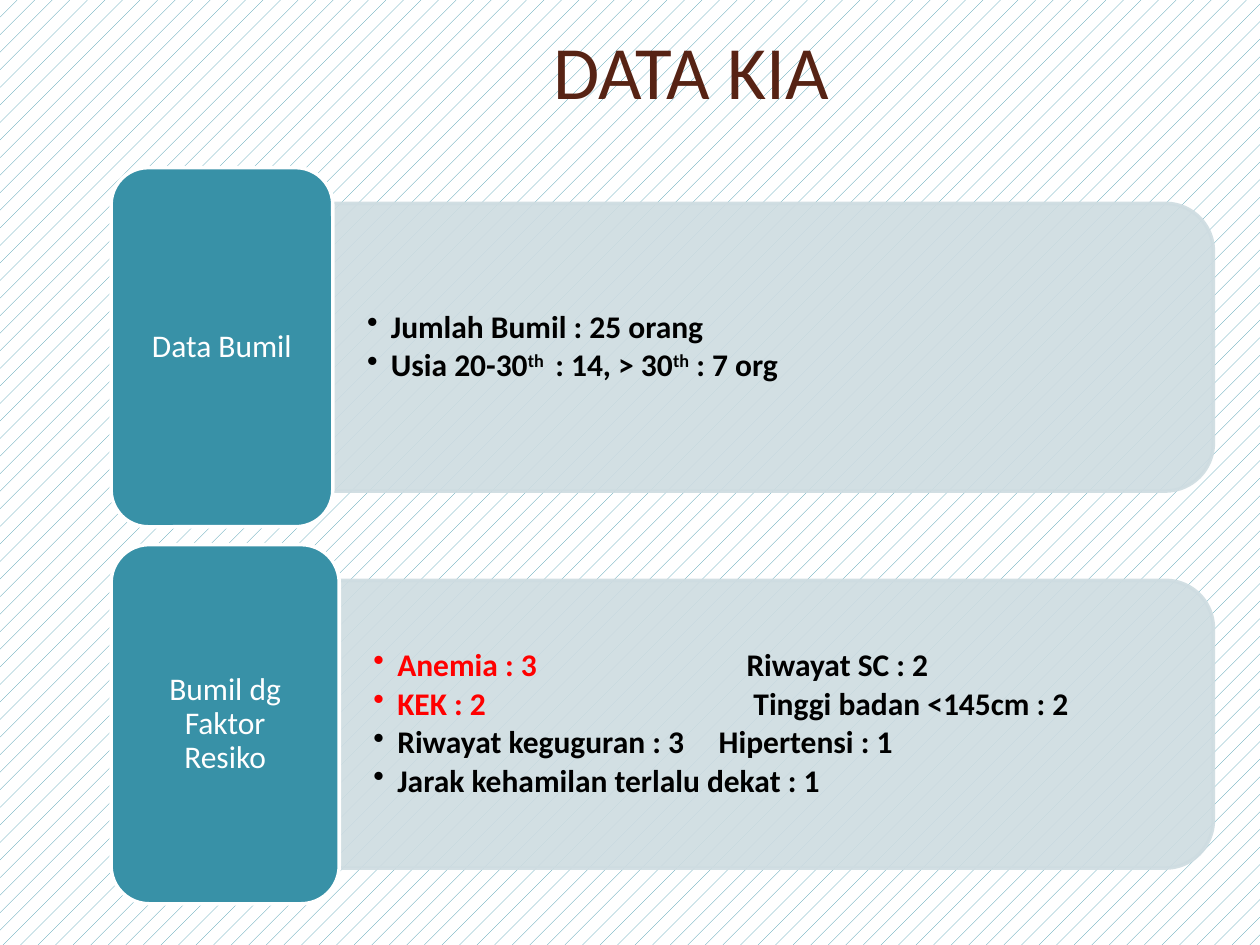
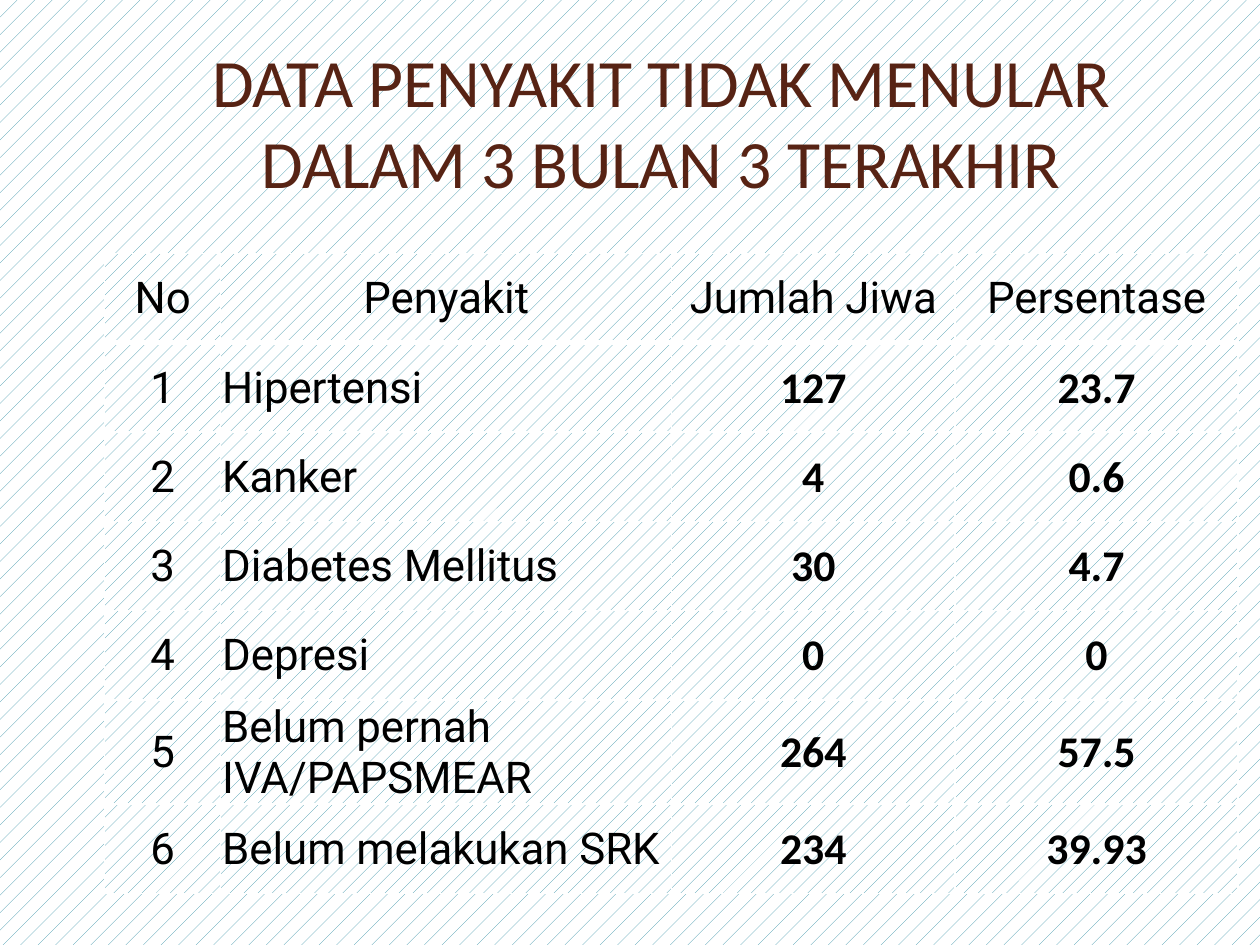
"""Builds two slides of maternal health and non-communicable disease data."""
from lxml import etree
from pptx import Presentation
from pptx.dml.color import RGBColor
from pptx.enum.dml import MSO_PATTERN
from pptx.enum.shapes import MSO_SHAPE
from pptx.enum.text import MSO_ANCHOR, MSO_AUTO_SIZE, PP_ALIGN
from pptx.oxml.ns import qn
from pptx.util import Cm, Pt

TEAL = RGBColor(0x38, 0x91, 0xA7)
PALE = RGBColor(0xCE, 0xDC, 0xE1)
BROWN = RGBColor(0x57, 0x23, 0x14)
RED = RGBColor(0xFF, 0x00, 0x00)
BLACK = RGBColor(0x00, 0x00, 0x00)
WHITE = RGBColor(0xFF, 0xFF, 0xFF)

PCT_5, PCT_10 = MSO_PATTERN.PERCENT_5, MSO_PATTERN.PERCENT_10
LABEL_SHAPE, PANEL_SHAPE = MSO_SHAPE.ROUNDED_RECTANGLE, MSO_SHAPE.ROUND_2_SAME_RECTANGLE
MIDDLE = MSO_ANCHOR.MIDDLE
LEFT, CENTER = PP_ALIGN.LEFT, PP_ALIGN.CENTER
NO_AUTOFIT = MSO_AUTO_SIZE.NONE

BODY_FONT, TABLE_FONT = "Calibri", "Roboto"
TITLE_ONLY = 5

SECTION_LEFT, SECTION_TOP, SECTION_PITCH = 2.24, 3.38, 7.6
LABEL_HEIGHT, PANEL_HEIGHT, DETAIL_HEIGHT = 7.24, 5.8, 5.2
PANEL_RIGHT, DETAIL_INSET = 24.46, 0.28

SECTIONS = [
    ("Data Bumil", 4.47, [
        ([("Jumlah Bumil : 25 orang", BLACK, 0)], None),
        ([("Usia 20-30", BLACK, 0), ("th ", BLACK, 30), (" : 14, > 30", BLACK, 0),
          ("th", BLACK, 30), (" : 7 org", BLACK, 0)], None),
    ]),
    ("Bumil dg Faktor Resiko", 4.6, [
        ([("Anemia : 3\t", RED, 0), ("Riwayat SC : 2", BLACK, 0)], 7.52),
        ([("KEK : 2", RED, 0), ("\tTinggi badan <145cm : 2", BLACK, 0)], 7.66),
        ([("Riwayat keguguran : 3\tHipertensi : 1", BLACK, 0)], 6.96),
        ([("Jarak kehamilan terlalu dekat : 1", BLACK, 0)], None),
    ]),
]

DISEASE_ROWS = [
    ("No", "Penyakit", "Jumlah Jiwa", "Persentase"),
    ("1", "Hipertensi", "127", "23.7"),
    ("2", "Kanker", "4", "0.6"),
    ("3", "Diabetes Mellitus", "30", "4.7"),
    ("4", "Depresi", "0", "0"),
    ("5", "Belum pernah IVA/PAPSMEAR", "264", "57.5"),
    ("6", "Belum melakukan SRK", "234", "39.93"),
]
COLUMN_WIDTHS = [2.34, 9.09, 5.71, 5.71]
ROW_HEIGHTS = [1.8] * 5 + [2, 1.8]


def style_font(font, name, size, color, bold=False):
    """Set the face, size, colour and weight of a font."""
    font.name, font.size, font.bold = name, Pt(size), bold
    font.color.rgb = color


def hatch(fill, pattern):
    """Fill with a teal pattern on white."""
    fill.patterned()
    fill.pattern = pattern
    fill.fore_color.rgb, fill.back_color.rgb = TEAL, WHITE


def set_margins(target, left, top, right, bottom):
    """Set the four inner margins of a text frame or cell, in centimetres."""
    target.margin_left, target.margin_top = Cm(left), Cm(top)
    target.margin_right, target.margin_bottom = Cm(right), Cm(bottom)


def add_titled_slide(deck, title, size, left, top, width):
    """Add a slide with the shared background and title style."""
    slide = deck.slides.add_slide(deck.slide_layouts[TITLE_ONLY])
    hatch(slide.background.fill, PCT_5)
    heading = slide.shapes.title
    heading.left, heading.top, heading.width, heading.height = map(Cm, (left, top, width, 3.18))
    frame = heading.text_frame
    frame.text = title
    frame.auto_size, frame.vertical_anchor, frame.word_wrap = NO_AUTOFIT, MIDDLE, True
    frame.paragraphs[0].alignment = CENTER
    style_font(frame.paragraphs[0].runs[0].font, BODY_FONT, size, BROWN)
    return slide


def add_filled(slide, kind, box, fill, line):
    """Add a flat preset shape with a solid fill and a 2 pt outline."""
    shape = slide.shapes.add_shape(kind, *map(Cm, box))
    shape.shadow.inherit = False
    shape.fill.solid()
    shape.fill.fore_color.rgb = fill
    shape.line.color.rgb = line
    shape.line.width = Pt(2)
    return shape


def add_panel(slide, left, middle, width):
    """Add a translucent panel whose right-hand corners are rounded."""
    box = (left + (width - PANEL_HEIGHT) / 2, middle - width / 2, PANEL_HEIGHT, width)
    panel = add_filled(slide, PANEL_SHAPE, box, PALE, PALE)
    panel.rotation = 90
    for color in panel.element.spPr.iter(qn("a:srgbClr")):
        etree.SubElement(color, qn("a:alpha"), val="90000")


def add_label(slide, text, top, width):
    """Add the teal label at the left of a section."""
    label = add_filled(slide, LABEL_SHAPE, (SECTION_LEFT, top, width, LABEL_HEIGHT), TEAL, WHITE)
    frame = label.text_frame
    frame.text = text
    frame.word_wrap, frame.vertical_anchor = True, MIDDLE
    set_margins(frame, 0.4, 0.33, 0.4, 0.33)
    paragraph = frame.paragraphs[0]
    paragraph.alignment, paragraph.line_spacing = CENTER, 0.9
    style_font(paragraph.runs[0].font, BODY_FONT, 18, WHITE)


def format_bullet(paragraph, tab_stop):
    """Give a paragraph a hanging bullet and an optional tab stop."""
    paragraph.line_spacing, paragraph.space_after = 0.9, Pt(2.7)
    properties = paragraph._p.get_or_add_pPr()
    properties.set("marL", str(Cm(0.48)))
    properties.set("indent", str(-Cm(0.48)))
    etree.SubElement(properties, qn("a:buChar"), char="•")
    if tab_stop:
        tabs = etree.SubElement(properties, qn("a:tabLst"))
        etree.SubElement(tabs, qn("a:tab"), pos=str(Cm(tab_stop)), algn="l")


def add_details(slide, bullets, left, middle, width):
    """Add the bold bulleted lines that lie on a panel."""
    box = (left, middle - DETAIL_HEIGHT / 2, width, DETAIL_HEIGHT)
    frame = slide.shapes.add_textbox(*map(Cm, box)).text_frame
    frame.word_wrap, frame.vertical_anchor = True, MIDDLE
    set_margins(frame, 0.69, 0.36, 0.69, 0.36)
    for index, (parts, tab_stop) in enumerate(bullets):
        paragraph = frame.add_paragraph() if index else frame.paragraphs[0]
        format_bullet(paragraph, tab_stop)
        for text, color, raised in parts:
            run = paragraph.add_run()
            run.text = text
            style_font(run.font, BODY_FONT, 18, color, bold=True)
            if raised:
                run.font._element.set("baseline", str(raised * 1000))


def add_section(slide, index, label, label_width, bullets):
    """Add one row of panel, details and label."""
    top = SECTION_TOP + index * SECTION_PITCH
    middle = top + LABEL_HEIGHT / 2
    left = SECTION_LEFT + label_width
    width = PANEL_RIGHT - left
    add_panel(slide, left, middle, width)
    add_details(slide, bullets, left, middle, width - DETAIL_INSET)
    add_label(slide, label, top, label_width)


def add_borders(cell, top, bottom):
    """Draw white cell borders, given the top and bottom widths in points."""
    properties = cell._tc.get_or_add_tcPr()
    for side, width in (("L", 1), ("R", 1), ("T", top), ("B", bottom)):
        line = etree.SubElement(properties, qn(f"a:ln{side}"), w=str(Pt(width)))
        solid = etree.SubElement(line, qn("a:solidFill"))
        etree.SubElement(solid, qn("a:srgbClr"), val=str(WHITE))


def format_cell(cell, text, row, column):
    """Write and style one cell of the disease table."""
    is_figure = row > 0 and column > 1
    cell.text = text
    cell.vertical_anchor = MIDDLE
    set_margins(cell, 0.03, 0.03, 0.03, 0)
    add_borders(cell, 3 if row == 1 else 1, 3 if row == 0 else 1)
    hatch(cell.fill, PCT_10)
    paragraph = cell.text_frame.paragraphs[0]
    paragraph.alignment = LEFT if row > 0 and column == 1 else CENTER
    style_font(paragraph.runs[0].font, BODY_FONT if is_figure else TABLE_FONT, 25, BLACK, is_figure)


def add_disease_table(slide):
    """Add the table of diseases with counts and percentages."""
    box = (2.11, 5.11, sum(COLUMN_WIDTHS), sum(ROW_HEIGHTS))
    table = slide.shapes.add_table(len(DISEASE_ROWS), len(COLUMN_WIDTHS), *map(Cm, box)).table
    table.horz_banding = False
    for column, width in zip(table.columns, COLUMN_WIDTHS):
        column.width = Cm(width)
    for row, height in zip(table.rows, ROW_HEIGHTS):
        row.height = Cm(height)
    for row, texts in enumerate(DISEASE_ROWS):
        for column, text in enumerate(texts):
            format_cell(table.cell(row, column), text, row, column)


def main():
    """Build and save the presentation."""
    deck = Presentation()
    deck.slide_width, deck.slide_height = Cm(25.4), Cm(19.05)
    maternal = add_titled_slide(deck, "DATA KIA", 43, 3.51, -0.2, 20.83)
    for index, section in enumerate(SECTIONS):
        add_section(maternal, index, *section)
    disease = add_titled_slide(
        deck, "DATA PENYAKIT TIDAK MENULAR DALAM 3 BULAN 3 TERAKHIR", 38.7, 2.11, 0.84, 22.43)
    add_disease_table(disease)
    deck.save("out.pptx")


if __name__ == "__main__":
    main()
